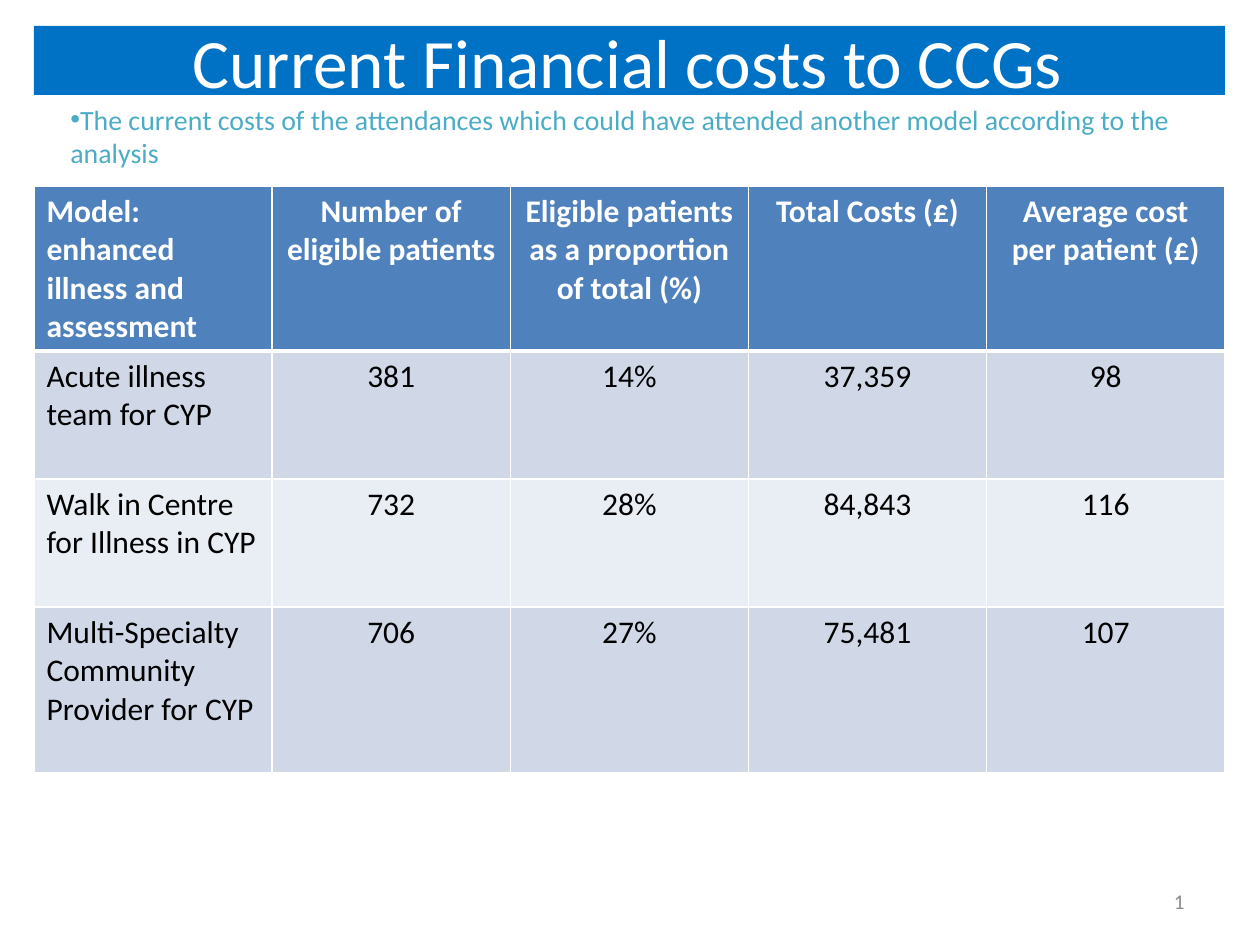
from lxml import etree
from pptx import Presentation
from pptx.dml.color import RGBColor
from pptx.enum.shapes import MSO_SHAPE
from pptx.enum.text import MSO_ANCHOR, PP_ALIGN
from pptx.oxml.ns import qn
from pptx.util import Emu, Pt

PX = 914400 // 126
RECT = MSO_SHAPE.RECTANGLE
TOP, MIDDLE = MSO_ANCHOR.TOP, MSO_ANCHOR.MIDDLE
LEFT, CENTER, RIGHT = PP_ALIGN.LEFT, PP_ALIGN.CENTER, PP_ALIGN.RIGHT
FONT = "Calibri"
COLORS = {
    "white": "FFFFFF", "black": "000000", "banner": "0072C6",
    "teal": "4BACC6", "gray": "8C8C8C", "head": "4F81BD",
    "odd": "D0D8E8", "even": "E9EDF4",
}
EDGE, WIDTH = 34, 1191
HEIGHTS = [165, 128, 128, 166]
COSTS = [
    ["Model: enhanced illness and assessment", "Number of eligible patients ",
     "Eligible patients as a proportion of total (%)", "Total Costs (£)",
     "Average cost per patient (£)"],
    ["Acute illness team for CYP", "381", "14%", "37,359", "98"],
    ["Walk in Centre for Illness in CYP", "732", "28%", "84,843", "116"],
    ["Multi-Specialty Community Provider for CYP",
     "706", "27%", "75,481", "107"],
]


def px(*vals):
    return [Emu(v * PX) for v in vals]


def rgb(name):
    return RGBColor.from_string(COLORS[name])


def write(frame, text, size, color, align=LEFT, bold=False):
    frame.text = text
    frame.word_wrap = True
    para = frame.paragraphs[0]
    para.alignment = align
    font = para.runs[0].font
    font.name, font.size, font.bold = FONT, Pt(size), bold
    font.color.rgb = rgb(color)
    return para


def indent(para, left):
    props = para._p.get_or_add_pPr()
    props.set("marL", str(left * PX))
    props.set("indent", "0")
    return props


def add_title(slide, text):
    bar = slide.shapes.add_shape(RECT, *px(EDGE, 26, WIDTH, 69))
    bar.shadow.inherit = False
    bar.fill.solid()
    bar.fill.fore_color.rgb = rgb("banner")
    bar.line.fill.background()
    bar.text_frame.vertical_anchor = MIDDLE
    indent(write(bar.text_frame, text, 39.6, "white", CENTER), 12)


def add_text(slide, box, text, size, color, align=LEFT, anchor=TOP):
    frame = slide.shapes.add_textbox(*px(*box)).text_frame
    frame.vertical_anchor = anchor
    return write(frame, text, size, color, align)


def add_bullet(para, left):
    props = indent(para, left)
    etree.SubElement(props, qn("a:buFont")).set("typeface", "Arial")
    etree.SubElement(props, qn("a:buChar")).set("char", "•")


def set_border(cell, widths):
    """Draw white lines; widths maps a side (L, R, T, B) to points."""
    props = cell._tc.get_or_add_tcPr()
    for spot, (side, width) in enumerate(widths.items()):
        line = etree.Element(qn("a:ln" + side), w=str(Pt(width)))
        fill = etree.SubElement(line, qn("a:solidFill"))
        etree.SubElement(fill, qn("a:srgbClr")).set("val", COLORS["white"])
        props.insert(spot, line)


def add_costs(slide):
    rows, cols = len(COSTS), len(COSTS[0])
    box = px(EDGE, 186, WIDTH, sum(HEIGHTS))
    table = slide.shapes.add_table(rows, cols, *box).table
    for r, line in enumerate(COSTS):
        table.rows[r].height = px(HEIGHTS[r])[0]
        head = r == 0
        fill = "head" if head else "odd" if r % 2 else "even"
        for c, text in enumerate(line):
            cell = table.cell(r, c)
            cell.fill.solid()
            cell.fill.fore_color.rgb = rgb(fill)
            write(cell.text_frame, text, 18, "white" if head else "black",
                  CENTER if c else LEFT, head)
            set_border(cell, {"L": 1, "R": 1, "T": 3 if r == 1 else 1,
                              "B": 3 if head else 1})


def main():
    deck = Presentation()
    deck.slide_width, deck.slide_height = px(1260, 945)
    slide = deck.slides.add_slide(deck.slide_layouts[6])
    add_title(slide, "Current Financial costs to CCGs ")
    note = add_text(slide, (EDGE, 96, WIDTH, 79),
                    "The current costs of the attendances which could have "
                    "attended another model according to the analysis",
                    15.9, "teal")
    add_bullet(note, 24)
    add_text(slide, (903, 876, 294, 50), "1", 12, "gray", RIGHT, MIDDLE)
    add_costs(slide)
    deck.save("out.pptx")


if __name__ == "__main__":
    main()
